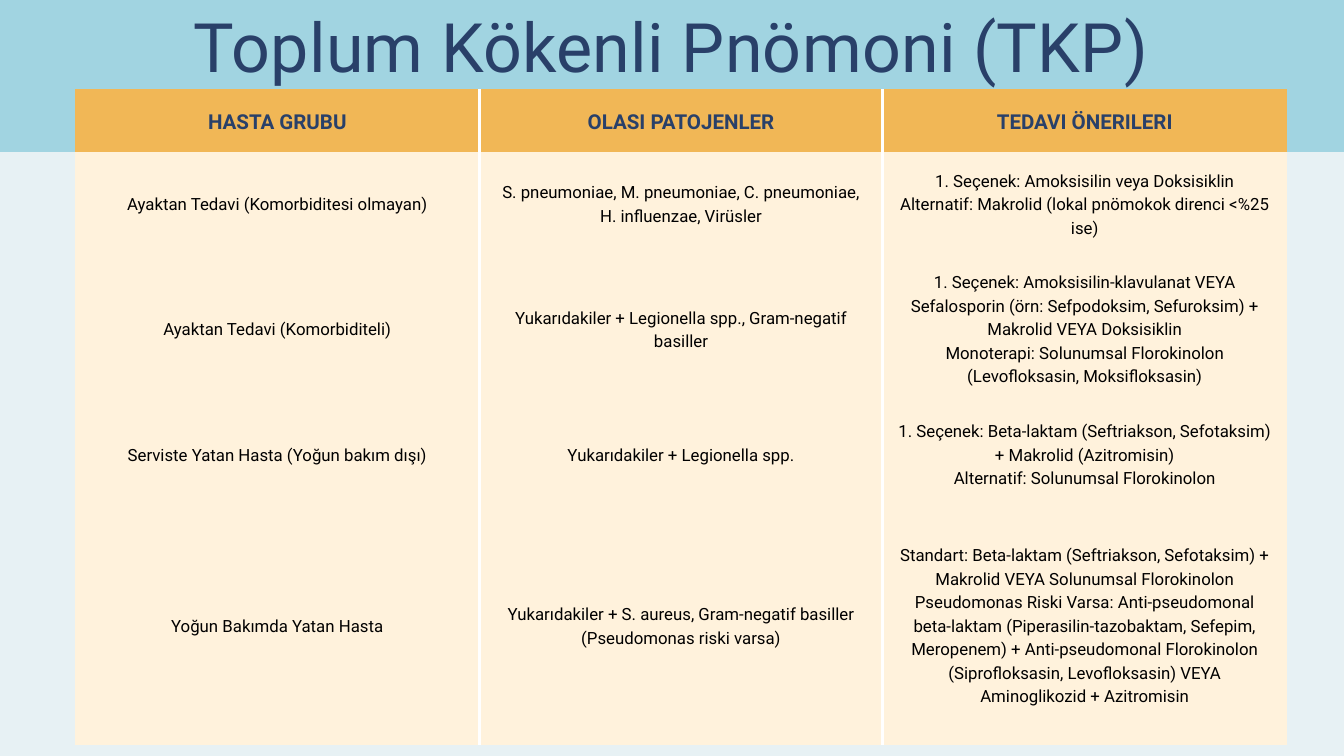
from lxml import etree
from pptx import Presentation
from pptx.dml.color import RGBColor
from pptx.enum.shapes import MSO_SHAPE
from pptx.enum.text import MSO_ANCHOR, MSO_AUTO_SIZE, PP_ALIGN
from pptx.oxml.ns import qn
from pptx.util import Cm, Pt

RECTANGLE = MSO_SHAPE.RECTANGLE
MIDDLE, TOP = MSO_ANCHOR.MIDDLE, MSO_ANCHOR.TOP
CENTER = PP_ALIGN.CENTER
NO_AUTOFIT = MSO_AUTO_SIZE.NONE

FONT = "Roboto"
NAVY, BLACK, WHITE = "294069", "000000", "FFFFFF"
PALE_BLUE, SKY, ORANGE, CREAM = "E7F1F4", "A1D4E1", "F1B756", "FFF2DC"

TITLE = "Toplum Kökenli Pnömoni (TKP)"
HEADERS = ["HASTA GRUBU", "OLASI PATOJENLER", "TEDAVI ÖNERILERI"]
PATIENT_GROUPS = [
    ("Ayaktan Tedavi (Komorbiditesi olmayan)",
     "S. pneumoniae, M. pneumoniae, C. pneumoniae, H. influenzae, Virüsler",
     "1. Seçenek: Amoksisilin veya Doksisiklin\n"
     "Alternatif: Makrolid (lokal pnömokok direnci <%25 ise)"),
    ("Ayaktan Tedavi (Komorbiditeli)",
     "Yukarıdakiler + Legionella spp., Gram-negatif basiller",
     "1. Seçenek: Amoksisilin-klavulanat VEYA Sefalosporin "
     "(örn: Sefpodoksim, Sefuroksim) + Makrolid VEYA Doksisiklin\n"
     "Monoterapi: Solunumsal Florokinolon (Levofloksasin, Moksifloksasin)"),
    ("Serviste Yatan Hasta (Yoğun bakım dışı)",
     "Yukarıdakiler + Legionella spp.",
     "1. Seçenek: Beta-laktam (Seftriakson, Sefotaksim) + Makrolid (Azitromisin)\n"
     "Alternatif: Solunumsal Florokinolon"),
    ("Yoğun Bakımda Yatan Hasta",
     "Yukarıdakiler + S. aureus, Gram-negatif basiller (Pseudomonas riski varsa)",
     "Standart: Beta-laktam (Seftriakson, Sefotaksim) + Makrolid VEYA "
     "Solunumsal Florokinolon\n"
     "Pseudomonas Riski Varsa: Anti-pseudomonal beta-laktam "
     "(Piperasilin-tazobaktam, Sefepim, Meropenem) + Anti-pseudomonal Florokinolon "
     "(Siprofloksasin, Levofloksasin) VEYA Aminoglikozid + Azitromisin"),
]
ROW_HEIGHTS = [2.36, 3.86, 5.61, 3.86, 9.09]
COLUMN_WIDTH = 15.26
CELL_MARGIN = 0.53
DIVIDER_WIDTH = 3.75


def paint(color_format, color):
    color_format.rgb = RGBColor.from_string(color)


def fill_solid(fill, color):
    fill.solid()
    paint(fill.fore_color, color)


def write(frame, text, *, size, color, leading, bold=False, spacing=0):
    frame.word_wrap = True
    frame.text = text
    for paragraph in frame.paragraphs:
        paragraph.alignment = CENTER
        paragraph.line_spacing = Pt(leading)
        paragraph.space_before = paragraph.space_after = Pt(0)
        for run in paragraph.runs:
            run.font.name = FONT
            run.font.size = Pt(size)
            run.font.bold = bold
            paint(run.font.color, color)
            if spacing:
                run.font._element.set("spc", str(spacing))


def set_borders(cell, divided_sides):
    properties = cell._tc.get_or_add_tcPr()
    for position, side in enumerate("LRTB"):
        line = etree.Element(qn(f"a:ln{side}"))
        if side in divided_sides:
            line.set("w", str(Pt(DIVIDER_WIDTH)))
            solid = etree.SubElement(line, qn("a:solidFill"))
            etree.SubElement(solid, qn("a:srgbClr"), val=WHITE)
        else:
            line.set("w", "0")
            etree.SubElement(line, qn("a:noFill"))
        properties.insert(position, line)


def add_band(slide, width):
    band = slide.shapes.add_shape(RECTANGLE, 0, Cm(-0.05), width, Cm(5.79))
    band.shadow.inherit = False
    fill_solid(band.fill, SKY)
    band.line.fill.background()


def add_treatment_table(slide):
    rows = [HEADERS, *PATIENT_GROUPS]
    columns = len(HEADERS)
    table = slide.shapes.add_table(
        len(rows), columns, Cm(2.85), Cm(3.38),
        Cm(COLUMN_WIDTH * columns), Cm(sum(ROW_HEIGHTS))).table
    table.first_row = table.horz_banding = False
    for column in table.columns:
        column.width = Cm(COLUMN_WIDTH)
    for r, (texts, height) in enumerate(zip(rows, ROW_HEIGHTS)):
        table.rows[r].height = Cm(height)
        for c, text in enumerate(texts):
            cell = table.cell(r, c)
            cell.vertical_anchor = MIDDLE
            cell.margin_left = cell.margin_right = Cm(CELL_MARGIN)
            cell.margin_top = cell.margin_bottom = Cm(CELL_MARGIN)
            fill_solid(cell.fill, CREAM if r else ORANGE)
            set_borders(cell, ("L" if c else "") + ("R" if c < columns - 1 else ""))
            if r:
                write(cell.text_frame, text, size=18, color=BLACK, leading=25.2)
            else:
                write(cell.text_frame, text, size=22, color=NAVY, leading=30.8, bold=True)


def place_title(slide):
    title = slide.shapes.title
    title.left, title.top, title.width, title.height = Cm(4.98), Cm(0.41), Cm(40.82), Cm(2.9)
    frame = title.text_frame
    frame.margin_left = frame.margin_right = frame.margin_top = frame.margin_bottom = 0
    frame.vertical_anchor = TOP
    frame.auto_size = NO_AUTOFIT
    write(frame, TITLE, size=73, color=NAVY, leading=80.3, spacing=40)
    slide.shapes._spTree.append(title._element)


def main():
    """Build the slide on community-acquired pneumonia treatment."""
    deck = Presentation()
    deck.slide_width, deck.slide_height = Cm(50.8), Cm(28.575)
    slide = deck.slides.add_slide(deck.slide_layouts[5])
    fill_solid(slide.background.fill, PALE_BLUE)
    add_band(slide, deck.slide_width)
    add_treatment_table(slide)
    place_title(slide)
    deck.save("out.pptx")


if __name__ == "__main__":
    main()
